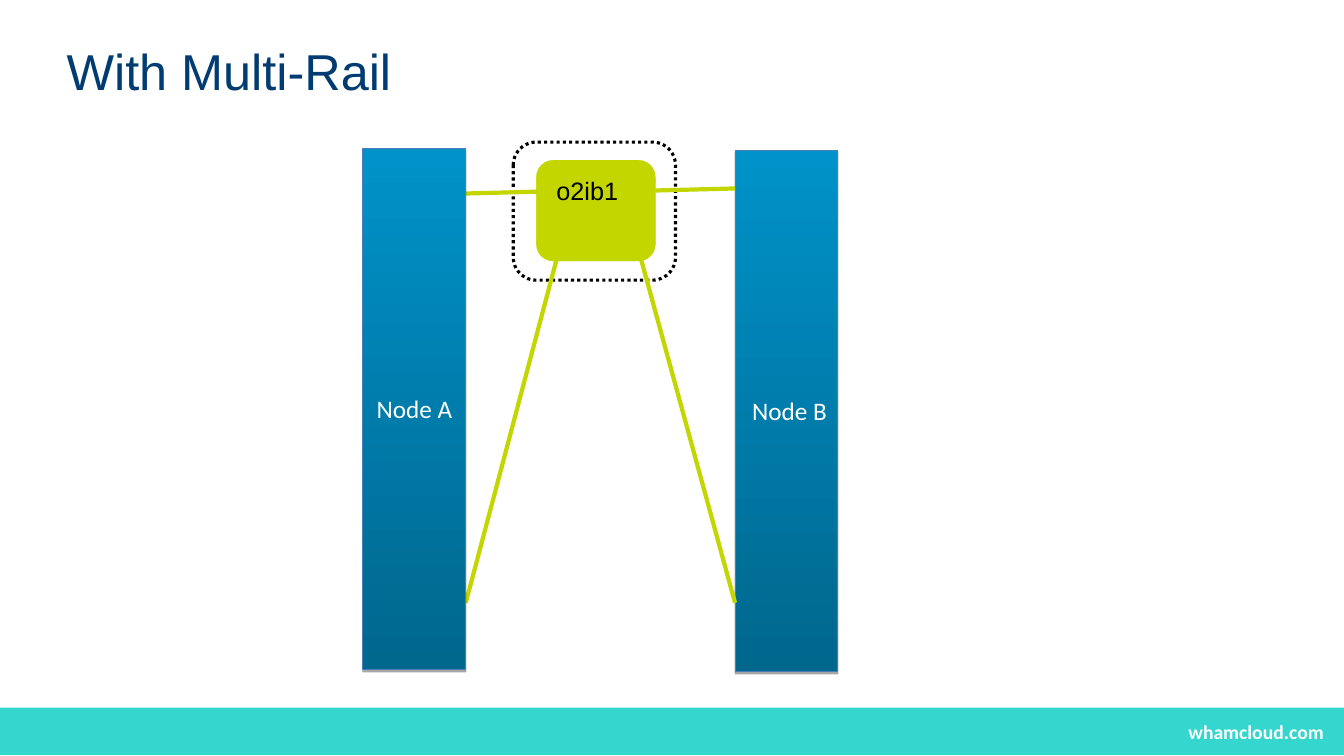
from lxml.etree import SubElement
from pptx import Presentation
from pptx.dml.color import RGBColor
from pptx.enum.dml import MSO_LINE
from pptx.enum.shapes import MSO_CONNECTOR, MSO_SHAPE
from pptx.enum.text import MSO_ANCHOR, PP_ALIGN
from pptx.oxml.ns import qn
from pptx.util import Inches, Pt

COLORS = {
    "title": "003C71", "bar": "34D6CE", "rail": "C3D600", "edge": "4A7EBB",
    "node_dark": "00678D", "node_light": "0092C9", "white": "FFFFFF", "black": "000000",
}
WIDTH, HEIGHT = 13.33, 7.5


def rgb(name):
    """Return the named palette colour."""
    return RGBColor.from_string(COLORS[name])


def write(tf, text, size=18, font="Calibri", color="white", bold=False,
          align=PP_ALIGN.LEFT, anchor=MSO_ANCHOR.TOP, inset=(0.1, 0.05), wrap=True):
    """Put one formatted paragraph into a text frame."""
    tf.word_wrap = wrap
    tf.vertical_anchor = anchor
    tf.margin_left = tf.margin_right = Inches(inset[0])
    tf.margin_top = tf.margin_bottom = Inches(inset[1])
    p = tf.paragraphs[0]
    p.alignment = align
    r = p.add_run()
    r.text = text
    r.font.size, r.font.name, r.font.bold = Pt(size), font, bold
    r.font.color.rgb = rgb(color)


def add_box(slide, box, kind=MSO_SHAPE.RECTANGLE, fill=None, line=None, width=0.75):
    """Add a preset shape without shadow, with optional fill and outline."""
    sp = slide.shapes.add_shape(kind, *map(Inches, box))
    sp.shadow.inherit = False
    if fill:
        sp.fill.solid()
        sp.fill.fore_color.rgb = rgb(fill)
    else:
        sp.fill.background()
    if line:
        sp.line.color.rgb = rgb(line)
        sp.line.width = Pt(width)
    else:
        sp.line.fill.background()
    return sp


def add_rail(slide, start, end):
    """Draw one network link between two points."""
    rail = slide.shapes.add_connector(MSO_CONNECTOR.STRAIGHT, *map(Inches, (*start, *end)))
    rail.line.color.rgb = rgb("rail")
    rail.line.width = Pt(3)
    SubElement(rail._element.spPr, qn("a:effectLst"))


def add_node(slide, box, label):
    """Add a gradient column with a soft lower edge and a centred label."""
    sp = add_box(slide, box, line="edge")
    sp.fill.gradient()
    sp.fill.gradient_angle = 90
    for stop, color in zip(sp.fill.gradient_stops, ("node_dark", "node_light")):
        stop.color.rgb = rgb(color)
    effects = sp._element.spPr.find(qn("a:effectLst"))
    shadow = SubElement(effects, qn("a:outerShdw"), blurRad="0", dist=str(Pt(1.8)),
                        dir="5400000", rotWithShape="0")
    tint = SubElement(shadow, qn("a:srgbClr"), val=COLORS["black"])
    SubElement(tint, qn("a:alpha"), val="35000")
    write(sp.text_frame, label, align=PP_ALIGN.CENTER, anchor=MSO_ANCHOR.MIDDLE)
    return sp


def add_title(slide, box, text):
    """Place and fill the title placeholder."""
    title = slide.shapes.title
    title.left, title.top, title.width, title.height = map(Inches, box)
    write(title.text_frame, text, size=36, font="Arial", color="title",
          anchor=MSO_ANCHOR.MIDDLE, inset=(0, 0))


def add_footer(slide, box, text):
    """Add the coloured band with the site address at its right."""
    left, top, width, height = box
    add_box(slide, box, fill="bar")
    tb = slide.shapes.add_textbox(*map(Inches, (left + width - 2.07, top + 0.07, 1.97, 0.33)))
    write(tb.text_frame, text, size=14, bold=True, align=PP_ALIGN.RIGHT, wrap=False)


def add_diagram(slide, box):
    """Draw two nodes joined by two rails each to a shared network."""
    left, top, width, height = box
    node_w, node_h = 1.02, 5.17
    inner_left, inner_right = left + node_w, left + width - node_w
    hub_left, hub_top, hub_w, hub_h = left + 1.72, top + 0.18, 1.18, 1
    hub_right = hub_left + hub_w
    low = top + 4.57

    group = add_box(slide, (left + 1.49, top, 1.61, 1.37), MSO_SHAPE.ROUNDED_RECTANGLE,
                    line="black", width=2.25)
    group.line.dash_style = MSO_LINE.ROUND_DOT
    add_rail(slide, (inner_left, top + 0.51), (hub_left + 0.06, top + 0.49))
    add_rail(slide, (inner_left, low), (hub_left + 0.22, top + 1.09))
    add_node(slide, (left, top + 0.06, node_w, node_h), "Node A")
    hub = add_box(slide, (hub_left, hub_top, hub_w, hub_h), MSO_SHAPE.ROUNDED_RECTANGLE,
                  fill="rail", line="rail", width=0.25)
    write(hub.text_frame, "o2ib1", font="Arial", color="black", inset=(0.15, 0.1))
    node_b = add_node(slide, (inner_right, top + height - node_h, node_w, node_h), "Node B")
    node_b.text_frame.margin_left = Inches(0.16)
    add_rail(slide, (hub_right, top + 0.48), (inner_right, top + 0.46))
    add_rail(slide, (hub_right - 0.2, top + 0.95), (inner_right, low))


def main():
    """Build and save the slide."""
    prs = Presentation()
    prs.slide_width, prs.slide_height = Inches(WIDTH), Inches(HEIGHT)
    slide = prs.slides.add_slide(prs.slide_layouts[5])
    add_footer(slide, (0, 7.02, WIDTH, 0.47), "whamcloud.com")
    add_title(slide, (0.66, 0.38, 12, 0.64), "With Multi-Rail")
    add_diagram(slide, (3.6, 1.41, 4.71, 5.25))
    prs.save("out.pptx")


if __name__ == "__main__":
    main()
